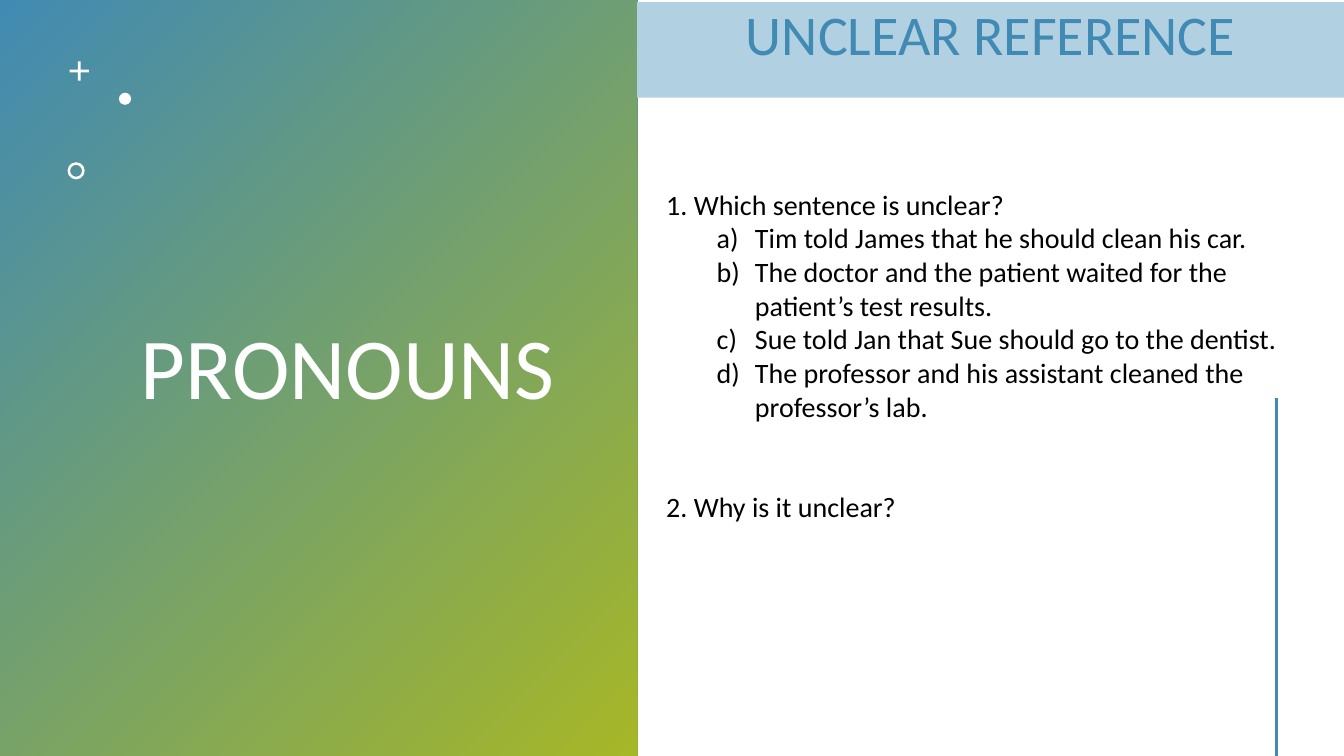
from lxml.etree import SubElement
from pptx import Presentation
from pptx.dml.color import RGBColor
from pptx.enum.shapes import MSO_CONNECTOR, MSO_SHAPE
from pptx.enum.text import MSO_ANCHOR, PP_ALIGN
from pptx.oxml.ns import qn
from pptx.util import Inches, Pt

BLUE = RGBColor(0x41, 0x8A, 0xB3)
GREEN = RGBColor(0xA6, 0xB7, 0x27)
PALE = RGBColor(0xB1, 0xD1, 0xE3)
WHITE = RGBColor(0xFF, 0xFF, 0xFF)
BLACK = RGBColor(0, 0, 0)

TITLE = "PRONOUNS"
HEADING = "UNCLEAR REFERENCE"
ASK = "1. Which sentence is unclear?"
CHOICES = [
    "Tim told James that he should clean his car.",
    "The doctor and the patient waited for the patient’s test results.",
    "Sue told Jan that Sue should go to the dentist.",
    "The professor and his assistant cleaned the professor’s lab.",
]
WHY = "2. Why is it unclear?"

WIDE, HIGH = 13.33, 7.5
SPLIT = 6.32
RULE = WIDE * 0.95
# preset, left, top, size, thickness adjustment
MARKS = [
    (MSO_SHAPE.CROSS, 0.69, 0.61, 0.19, 0.43),
    (MSO_SHAPE.OVAL, 1.18, 0.92, 0.12, None),
    (MSO_SHAPE.DONUT, 0.67, 1.61, 0.17, 0.15),
]


def box(*spot):
    return [Inches(n) for n in spot]


def add_block(slide, kind, spot, color=None):
    """Add a preset shape without outline or shadow."""
    shape = slide.shapes.add_shape(kind, *box(*spot))
    shape.shadow.inherit = False
    shape.line.fill.background()
    if color is not None:
        shape.fill.solid()
        shape.fill.fore_color.rgb = color
    return shape


def add_text(slide, spot, anchor):
    frame = slide.shapes.add_textbox(*box(*spot)).text_frame
    frame.word_wrap = True
    frame.vertical_anchor = anchor
    return frame


def style(para, text, size, color):
    para.text = text
    para.font.name = "Calibri"
    para.font.size = Pt(size)
    para.font.color.rgb = color
    return para


def number(para):
    """Letter the paragraph a), b), c) with a hanging indent."""
    props = para._p.get_or_add_pPr()
    props.set("marL", str(Inches(0.88)))
    props.set("indent", str(Inches(-0.38)))
    mark = SubElement(props, qn("a:buAutoNum"), type="alphaLcParenR")
    props.remove(mark)
    props.insert_element_before(mark, "a:tabLst", "a:defRPr", "a:extLst")


def main():
    deck = Presentation()
    deck.slide_width, deck.slide_height = box(WIDE, HIGH)
    slide = deck.slides.add_slide(deck.slide_layouts[6])

    panel = add_block(slide, MSO_SHAPE.RECTANGLE, (0, 0, SPLIT, HIGH))
    panel.fill.gradient()
    panel.fill.gradient_angle = 315
    for stop, color in zip(panel.fill.gradient_stops, (BLUE, GREEN)):
        stop.color.rgb = color

    frame = add_text(slide, (1.3, 0.42, 4.38, 6.53), MSO_ANCHOR.MIDDLE)
    style(frame.paragraphs[0], TITLE, 62, WHITE).line_spacing = 0.9

    for kind, left, top, size, thick in MARKS:
        mark = add_block(slide, kind, (left, top, size, size), WHITE)
        if thick:
            mark.adjustments[0] = thick

    rule = slide.shapes.add_connector(
        MSO_CONNECTOR.STRAIGHT, *box(RULE, 3.95, RULE, HIGH))
    rule.line.color.rgb = BLUE
    rule.line.width = Pt(2)
    SubElement(rule._element.spPr, qn("a:effectLst"))

    frame = add_text(slide, (6.51, 1.81, 6.67, 4.14), MSO_ANCHOR.TOP)
    style(frame.paragraphs[0], ASK, 20, BLACK)
    for choice in CHOICES:
        number(style(frame.add_paragraph(), choice, 20, BLACK))
    style(frame.add_paragraph(), WHY, 20, BLACK).space_before = Pt(48)

    band = add_block(slide, MSO_SHAPE.RECTANGLE,
                     (SPLIT, 0.02, WIDE - SPLIT, 0.95), PALE)
    band.text_frame.vertical_anchor = MSO_ANCHOR.TOP
    head = style(band.text_frame.paragraphs[0], HEADING, 40, BLUE)
    head.alignment = PP_ALIGN.CENTER
    head.line_spacing = 0.9

    deck.save("out.pptx")


if __name__ == "__main__":
    main()
